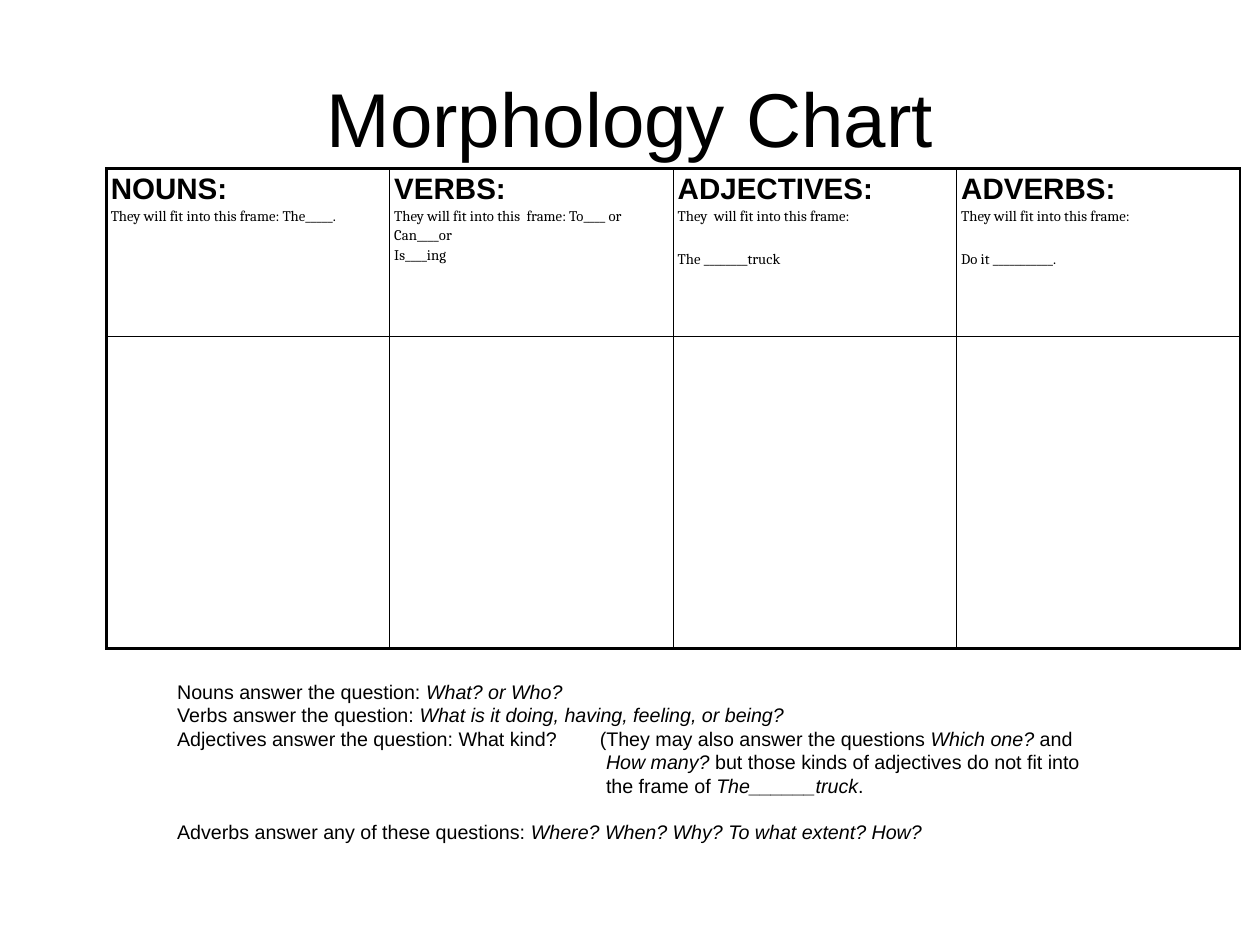
from lxml.etree import SubElement
from pptx import Presentation
from pptx.dml.color import RGBColor
from pptx.enum.text import MSO_ANCHOR, MSO_AUTO_SIZE, PP_ALIGN
from pptx.oxml.ns import qn
from pptx.util import Inches, Pt

COLORS = {"ink": "000000", "paper": "FFFFFF"}
FORMATS = {
    "title": {"name": "Arial", "size": Pt(62), "bold": False},
    "head": {"name": "Arial", "size": Pt(24), "bold": True},
    "frame": {"name": "Cambria", "size": Pt(12), "bold": False},
    "note": {"name": "Arial", "size": Pt(16), "italic": False},
    "stress": {"name": "Arial", "size": Pt(16), "italic": True},
}
THICK, THIN = Pt(2.25), Pt(1)

WORDS = [
    ("NOUNS:", [("They will fit into this frame: The_____.", 2)]),
    ("VERBS:", [("They will fit into this  frame: To____ or", 2),
                ("Can____or", 2), ("Is____ing", 2)]),
    ("ADJECTIVES:", [("They  will fit into this frame:", 2),
                     ("The ________truck", 21)]),
    ("ADVERBS:", [("They will fit into this frame:", 2),
                  ("Do it ___________.", 21)]),
]
HANG = {"indent": 4.84}
NOTES = [
    ({}, [("Nouns answer the question: ", "note"), ("What? or Who?", "stress")]),
    ({}, [("Verbs answer the question: ", "note"),
          ("What is it doing, having, feeling, or being?", "stress")]),
    ({"tab": 4.77}, [
        ("Adjectives answer the question: What kind?\t"
         "(They may also answer the questions ", "note"),
        ("Which one?", "stress"), (" and", "note")]),
    (HANG, [("How many?", "stress"),
            (" but those kinds of adjectives do not fit into", "note")]),
    (HANG, [("the frame of ", "note"), ("The______truck", "stress"), (".", "note")]),
    ({"before": 18.4}, [("Adverbs answer any of these questions: ", "note"),
                        ("Where? When? Why? To what extent? How?", "stress")]),
]


class Page:
    def __init__(self, wide, high):
        self.deck = Presentation()
        self.deck.slide_width = self.wide = Inches(wide)
        self.deck.slide_height = self.high = Inches(high)
        self.slide = self.deck.slides.add_slide(self.deck.slide_layouts[5])

    def box(self, left, top, wide, high):
        return [int(size * part / 100) for size, part in zip(
            (self.wide, self.high) * 2, (left, top, wide, high))]

    def color(self, name):
        return RGBColor.from_string(COLORS[name])

    def frame(self, frame, inset, anchor):
        values = {"margin_left": inset, "margin_right": inset,
                  "margin_top": inset, "margin_bottom": inset,
                  "word_wrap": True, "auto_size": MSO_AUTO_SIZE.NONE,
                  "vertical_anchor": anchor}
        for key, value in values.items():
            setattr(frame, key, value)

    def line(self, frame, first, runs, before=0, indent=0, tab=0,
             align=PP_ALIGN.LEFT):
        para = frame.paragraphs[0] if first else frame.add_paragraph()
        para.alignment = align
        para.space_before = Pt(before)
        props = para._p.get_or_add_pPr()
        if indent:
            props.set("marL", str(Inches(indent)))
            props.set("indent", "0")
        if tab:
            stops = SubElement(props, qn("a:tabLst"))
            SubElement(stops, qn("a:tab"), pos=str(Inches(tab)), algn="l")
        for text, style in runs:
            run = para.add_run()
            run.text = text
            for key, value in FORMATS[style].items():
                setattr(run.font, key, value)
            run.font.color.rgb = self.color("ink")

    def title(self, text, *area):
        shape = self.slide.shapes.title
        shape.left, shape.top, shape.width, shape.height = self.box(*area)
        self.frame(shape.text_frame, 0, MSO_ANCHOR.MIDDLE)
        self.line(shape.text_frame, True, [(text, "title")], align=PP_ALIGN.CENTER)

    def notes(self, lines, *area):
        frame = self.slide.shapes.add_textbox(*self.box(*area)).text_frame
        self.frame(frame, Inches(0.07), MSO_ANCHOR.TOP)
        for at, (layout, runs) in enumerate(lines):
            self.line(frame, at == 0, runs, **layout)

    def cell(self, cell, edges):
        for key in ("left", "right", "top", "bottom"):
            setattr(cell, "margin_" + key, Inches(0.05))
        props = cell._tc.get_or_add_tcPr()
        for side, outer in edges.items():
            edge = SubElement(props, qn("a:ln" + side), w=str(THICK if outer else THIN))
            fill = SubElement(edge, qn("a:solidFill"))
            SubElement(fill, qn("a:srgbClr"), val=COLORS["ink"])
        cell.fill.solid()
        cell.fill.fore_color.rgb = self.color("paper")

    def table(self, words, heights, *area):
        count, last = len(words), len(heights) - 1
        table = self.slide.shapes.add_table(
            len(heights), count, *self.box(*area, sum(heights))).table
        table.first_row = table.horz_banding = False
        for row, share in zip(table.rows, heights):
            row.height = int(self.high * share / 100)
        for down, row in enumerate(table.rows):
            for across, cell in enumerate(row.cells):
                self.cell(cell, {"L": across == 0, "R": across == count - 1,
                                 "T": down == 0, "B": down == last})
        for cell, (head, lines) in zip(table.rows[0].cells, words):
            self.line(cell.text_frame, True, [(head, "head")], 3)
            for text, before in lines:
                self.line(cell.text_frame, False, [(text, "frame")], before)


def main():
    page = Page(14.22, 10.67)
    page.title("Morphology Chart", 5, 4.03, 90, 16.68)
    page.table(WORDS, (17.81, 32.99), 8.44, 17.81, 90)
    page.notes(NOTES, 13.57, 71.23, 73.07, 17.62)
    page.deck.save("out.pptx")


if __name__ == "__main__":
    main()
